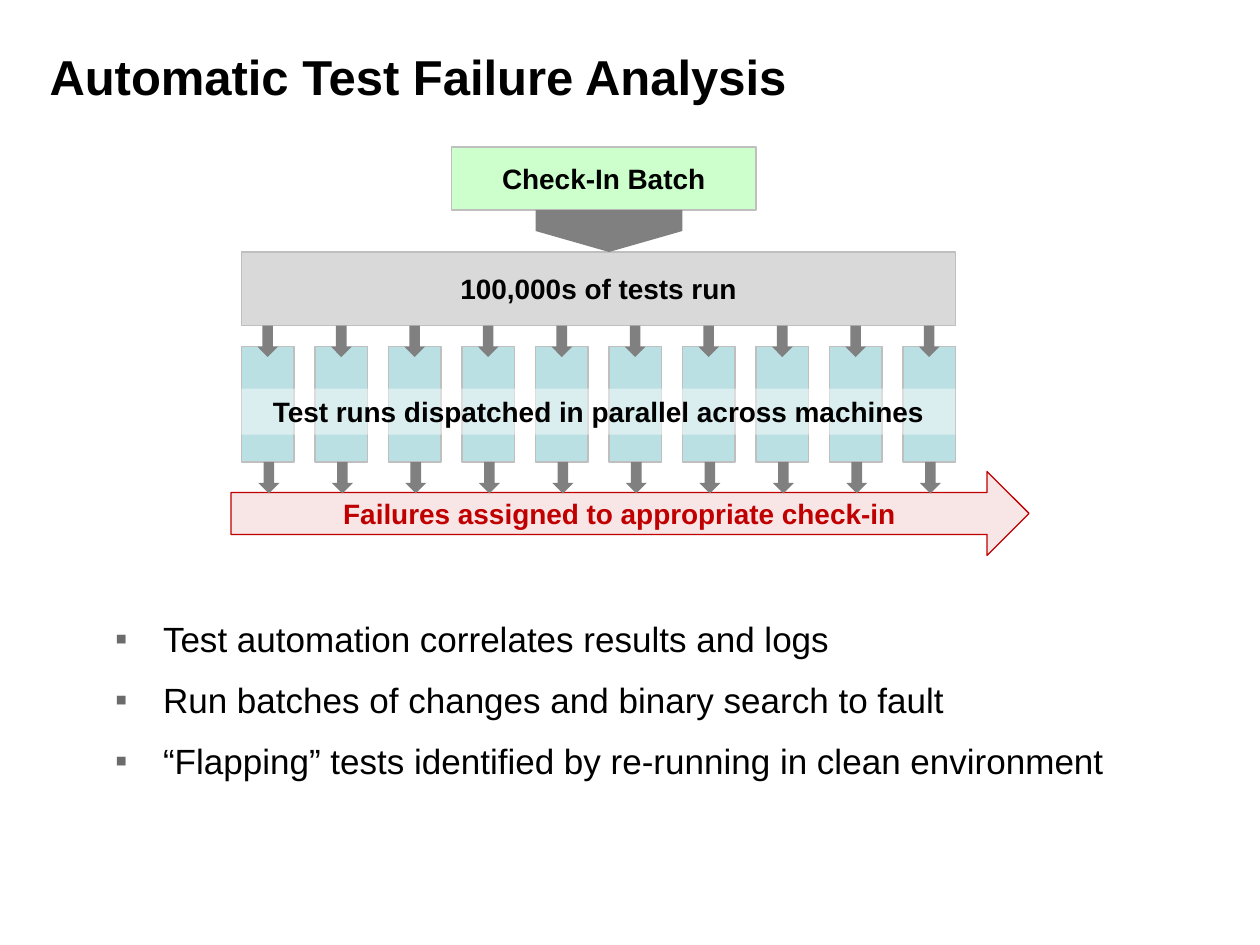
from dataclasses import dataclass
from typing import Optional

from lxml.etree import SubElement
from pptx import Presentation
from pptx.dml.color import RGBColor
from pptx.enum.shapes import MSO_SHAPE
from pptx.enum.text import MSO_ANCHOR, PP_ALIGN
from pptx.oxml.ns import qn
from pptx.util import Inches, Pt

CELL = 1 / 12
MACHINES = 10
MACHINE_PITCH = 7
GREY, BORDER, BLACK, RED = "808080", "BFBFBF", "000000", "C00000"
FINDINGS = [
    "Test automation correlates results and logs",
    "Run batches of changes and binary search to fault",
    "“Flapping” tests identified by re-running in clean environment",
]


@dataclass(frozen=True)
class Block:
    """A filled shape placed in columns and rows of a twelfth of an inch."""

    column: float
    row: float
    columns: float
    rows: float
    fill: str
    border: Optional[str] = None
    label: str = ""
    ink: str = BLACK
    outline: MSO_SHAPE = MSO_SHAPE.RECTANGLE
    opacity: int = 100
    rotation: int = 0
    anchor: MSO_ANCHOR = MSO_ANCHOR.MIDDLE


def cells(*counts: float) -> list:
    """Convert grid counts to lengths."""
    return [Inches(count * CELL) for count in counts]


def paint(colour_format, colour: str) -> None:
    """Give a fill, line or font colour its hex value."""
    colour_format.rgb = RGBColor.from_string(colour)


def style(paragraph, size: float, colour: str = BLACK, bold: bool = False) -> None:
    """Set the font of a whole paragraph."""
    font = paragraph.font
    font.name, font.size, font.bold = "Arial", Pt(size), bold
    paint(font.color, colour)


def draw_block(slide, block: Block) -> None:
    """Draw one block with its optional border and label."""
    shape = slide.shapes.add_shape(
        block.outline, *cells(block.column, block.row, block.columns, block.rows)
    )
    shape.shadow.inherit = False
    shape.rotation = block.rotation
    shape.fill.solid()
    paint(shape.fill.fore_color, block.fill)
    if block.opacity < 100:
        colour = shape.fill._xPr.find(qn("a:solidFill"))[0]
        SubElement(colour, qn("a:alpha"), val=str(block.opacity * 1000))
    if block.border:
        paint(shape.line.color, block.border)
        shape.line.width = Pt(0.75)
    else:
        shape.line.fill.background()
    if block.label:
        frame = shape.text_frame
        frame.word_wrap = True
        frame.vertical_anchor = block.anchor
        paragraph = frame.paragraphs[0]
        paragraph.text = block.label
        paragraph.alignment = PP_ALIGN.CENTER
        style(paragraph, 16, block.ink, True)


def draw_arrows(slide, column: float, row: float) -> None:
    """Draw one small down arrow for every machine."""
    for machine in range(MACHINES):
        left = column + machine * MACHINE_PITCH
        draw_block(slide, Block(left, row, 2, 3, GREY, outline=MSO_SHAPE.DOWN_ARROW))


def add_text_frame(slide, place: list, insets: tuple):
    """Add a wrapping text box and return its frame."""
    frame = slide.shapes.add_textbox(*place).text_frame
    frame.word_wrap = True
    (frame.margin_left, frame.margin_top,
     frame.margin_right, frame.margin_bottom) = map(Inches, insets)
    return frame


def draw_title(slide) -> None:
    """Write the slide heading."""
    frame = add_text_frame(slide, cells(4, 0, 108, 14.4), (0.06, 0.06, 0.1, 0.06))
    frame.vertical_anchor = MSO_ANCHOR.MIDDLE
    heading = frame.paragraphs[0]
    heading.text = "Automatic Test Failure Analysis"
    style(heading, 28, bold=True)


def draw_findings(slide) -> None:
    """Write the bulleted findings."""
    frame = add_text_frame(slide, cells(10, 57.2, 104, 19), (0.07, 0.07, 0.15, 0.07))
    for index, finding in enumerate(FINDINGS):
        paragraph = frame.add_paragraph() if index else frame.paragraphs[0]
        paragraph.text = finding
        paragraph.line_spacing = 1.2
        paragraph.space_before = Pt(6 if index else 0)
        properties = paragraph._p.get_or_add_pPr()
        properties.set("marL", str(Inches(0.39)))
        properties.set("indent", str(Inches(-0.38)))
        bullet_colour = SubElement(properties, qn("a:buClr"))
        SubElement(bullet_colour, qn("a:srgbClr"), val="6B6B6B")
        SubElement(properties, qn("a:buFont"), typeface="Arial")
        SubElement(properties, qn("a:buChar"), char="▪")
        style(paragraph, 20)


def draw_pipeline(slide) -> None:
    """Draw the flow from check-in batch to assigned failures."""
    draw_block(slide, Block(23, 24, 68, 7, "D9D9D9", BORDER, "100,000s of tests run"))
    for machine in range(MACHINES):
        left = 23 + machine * MACHINE_PITCH
        draw_block(slide, Block(left, 33, 5, 11, "BBE0E3", BORDER))
    draw_arrows(slide, 24.5, 31)
    draw_block(slide, Block(
        23, 37, 68, 4.4, "FFFFFF", opacity=46, anchor=MSO_ANCHOR.TOP,
        label="Test runs dispatched in parallel across machines"))
    draw_block(slide, Block(43, 14, 29, 6, "CCFFCC", BORDER, "Check-In Batch"))
    draw_block(slide, Block(
        56, 15, 4, 14, GREY, outline=MSO_SHAPE.PENTAGON, rotation=90))
    draw_block(slide, Block(
        22, 44.9, 76, 8, RED, RED, "Failures assigned to appropriate check-in",
        RED, MSO_SHAPE.RIGHT_ARROW, opacity=10))
    draw_arrows(slide, 24.6, 44)


def main() -> None:
    """Build and save the slide."""
    presentation = Presentation()
    presentation.slide_width, presentation.slide_height = cells(120, 90)
    slide = presentation.slides.add_slide(presentation.slide_layouts[6])
    draw_title(slide)
    draw_findings(slide)
    draw_pipeline(slide)
    presentation.save("out.pptx")


if __name__ == "__main__":
    main()
